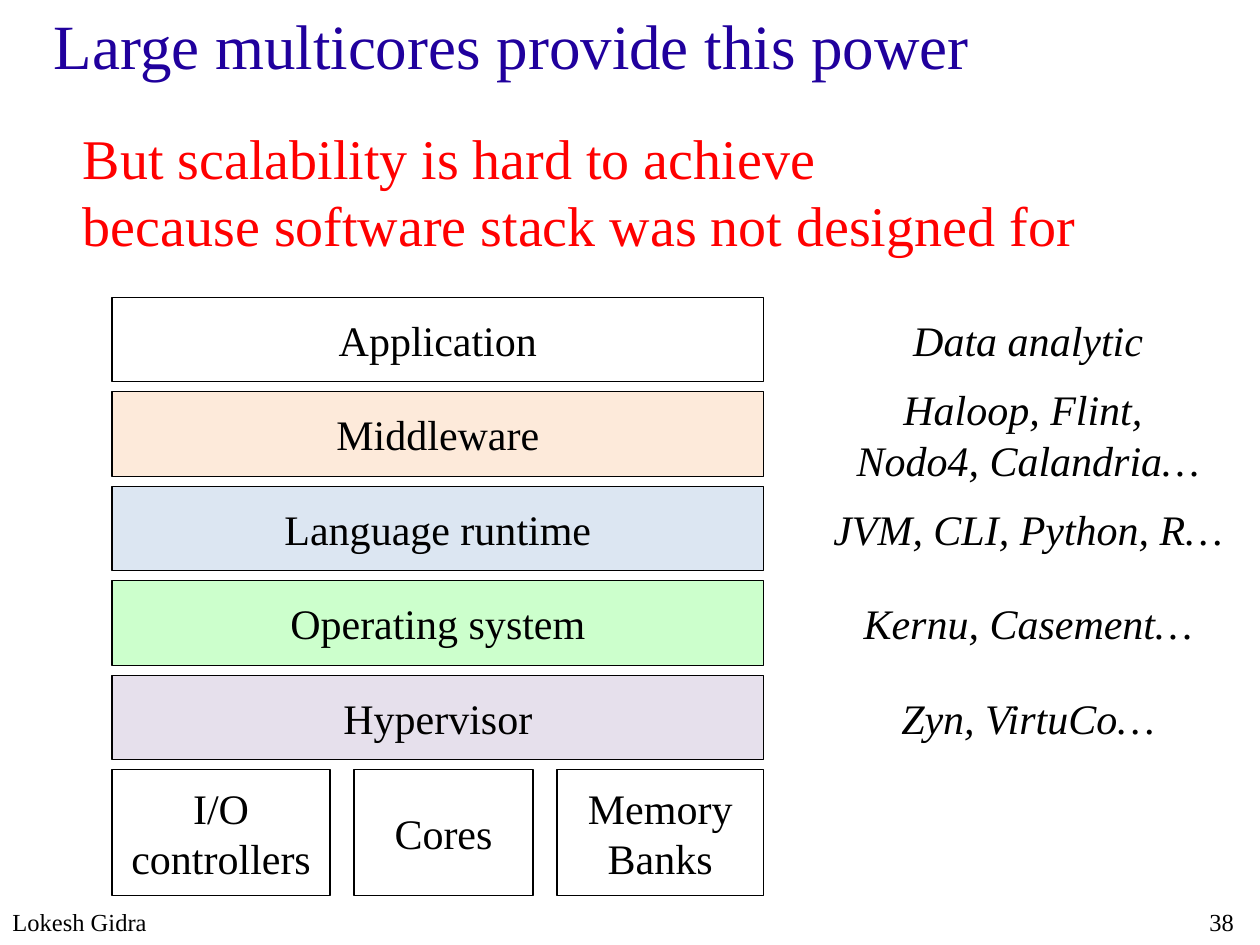
from dataclasses import dataclass

from pptx import Presentation
from pptx.dml.color import RGBColor
from pptx.enum.shapes import MSO_SHAPE
from pptx.enum.text import MSO_ANCHOR, PP_ALIGN
from pptx.util import Inches, Pt

RECT = MSO_SHAPE.RECTANGLE
LEFT, CENTER = PP_ALIGN.LEFT, PP_ALIGN.CENTER
TOP, MIDDLE = MSO_ANCHOR.TOP, MSO_ANCHOR.MIDDLE
FONT = "Times New Roman"

COLORS = {
    "title": "20009D",
    "claim": "FF0000",
    "ink": "000000",
    "orange": "FDEADA",
    "blue": "DCE6F2",
    "green": "CCFFCC",
    "purple": "E6E0EC",
}


@dataclass
class Box:
    left: float
    top: float
    width: float
    height: float


@dataclass
class Layer:
    name: str
    fill: str | None
    sample: str


@dataclass
class Part:
    name: str
    left: float
    width: float


LAYERS = [
    Layer("Application", None, "Data analytic"),
    Layer("Middleware", "orange", "Haloop, Flint, \vNodo4, Calandria…"),
    Layer("Language runtime", "blue", "JVM, CLI, Python, R…"),
    Layer("Operating system", "green", "Kernu, Casement…"),
    Layer("Hypervisor", "purple", "Zyn, VirtuCo…"),
]
PARTS = [
    Part("I/O controllers", 0.89, 1.73),
    Part("Cores", 2.81, 1.42),
    Part("Memory Banks", 4.42, 1.64),
]

# Stack grid
STACK_X, STACK_Y, STACK_W = 0.89, 2.36, 5.17
ROW_H, STEP = 0.67, 0.75
SAMPLE_X, SAMPLE_W = 6.33, 3.66
PART_H = 1


def rgb(name: str) -> RGBColor:
    return RGBColor.from_string(COLORS[name])


def place(box: Box) -> tuple:
    return tuple(Inches(n) for n in (box.left, box.top, box.width, box.height))


def write(shape, text: str, size: int = 24, color: str = "ink",
          align=CENTER, anchor=MIDDLE, italic: bool = False) -> None:
    frame = shape.text_frame
    frame.word_wrap = True
    frame.vertical_anchor = anchor
    frame.text = text
    for para in frame.paragraphs:
        para.alignment = align
        for run in para.runs:
            run.font.name = FONT
            run.font.size = Pt(size)
            run.font.italic = italic
            run.font.color.rgb = rgb(color)


def add_text(slide, box: Box, text: str, **style) -> None:
    write(slide.shapes.add_textbox(*place(box)), text, **style)


def add_block(slide, box: Box, text: str, fill: str | None = None) -> None:
    shape = slide.shapes.add_shape(RECT, *place(box))
    shape.shadow.inherit = False
    if fill:
        shape.fill.solid()
        shape.fill.fore_color.rgb = rgb(fill)
    else:
        shape.fill.background()
    shape.line.color.rgb = rgb("ink")
    shape.line.width = Pt(0.75)
    write(shape, text)


def main() -> None:
    deck = Presentation()
    deck.slide_width, deck.slide_height = Inches(10), Inches(7.5)
    slide = deck.slides.add_slide(deck.slide_layouts[6])

    # Title and claim
    add_text(slide, Box(0.33, 0, 9.67, 1.25), "Large multicores provide this power",
             size=36, color="title", align=LEFT, anchor=TOP)
    add_text(slide, Box(0.56, 0.93, 9.26, 1.18),
             "But scalability is hard to achieve \v"
             "because software stack was not designed for",
             size=32, color="claim", align=LEFT, anchor=TOP)

    # Software layers with samples beside them
    for row, layer in enumerate(LAYERS):
        top = STACK_Y + row * STEP
        add_block(slide, Box(STACK_X, top, STACK_W, ROW_H), layer.name, layer.fill)
        add_text(slide, Box(SAMPLE_X, top, SAMPLE_W, ROW_H), layer.sample, italic=True)

    # Hardware parts under the stack
    base = STACK_Y + len(LAYERS) * STEP
    for part in PARTS:
        add_block(slide, Box(part.left, base, part.width, PART_H), part.name)

    # Footer
    add_text(slide, Box(0, 7.13, 6.12, 0.37), "Lokesh Gidra", size=14, align=LEFT)
    add_text(slide, Box(9.5, 7.13, 0.5, 0.37), "38", size=14, align=LEFT)

    deck.save("out.pptx")


if __name__ == "__main__":
    main()
